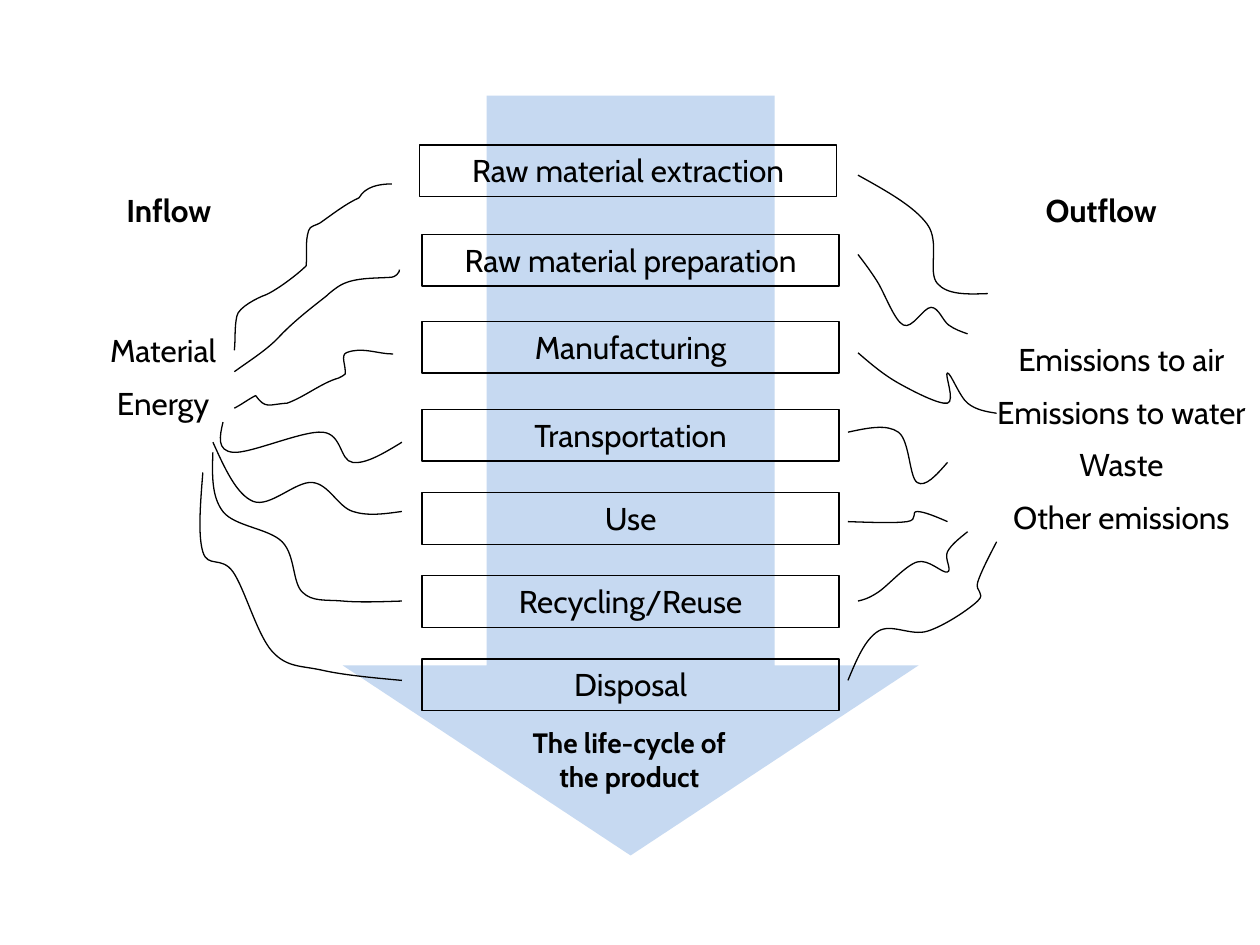
from lxml import etree
from pptx import Presentation
from pptx.dml.color import RGBColor
from pptx.enum.shapes import MSO_SHAPE
from pptx.enum.text import MSO_ANCHOR, PP_ALIGN
from pptx.oxml.ns import qn
from pptx.util import Cm, Pt

RECT, ARROW = MSO_SHAPE.RECTANGLE, MSO_SHAPE.DOWN_ARROW
CENTER, TOP = PP_ALIGN.CENTER, MSO_ANCHOR.TOP
FONT, BLACK, BLUE = "Cabin", "000000", "C6D9F1"

# Content: all places in inches, turned into Cm by size()
STAGES = [
    ("Raw material extraction", 3.33, 1.15),
    ("Raw material preparation", 3.35, 1.86),
    ("Manufacturing", 3.35, 2.55),
    ("Transportation", 3.35, 3.25),
    ("Use", 3.35, 3.91),
    ("Recycling/Reuse", 3.35, 4.57),
    ("Disposal", 3.35, 5.23),
]
# lines, place, point size, bold
LABELS = [
    (["Material", "Energy"], (0.43, 2.58, 1.73, 0.85), 18, False),
    (["The life-cycle of the product"], (4.05, 5.71, 1.89, 0.64), 16, True),
    (["Outflow"], (8.07, 1.47, 1.34, 0.4), 18, True),
    (["Inflow"], (0.67, 1.47, 1.34, 0.4), 18, True),
    (["Emissions to air", "Emissions to water", "Waste", "Other emissions"],
     (7.76, 2.65, 2.28, 1.76), 18, False),
]
# Curves with cornered bends: start, then two handles and a knot per piece
BENT = [
    [(1.86, 2.78), (1.87, 2.69), (1.86, 2.6), (1.88, 2.51),
     (1.89, 2.44), (2.05, 2.36), (2.11, 2.34),
     (2.2, 2.3), (2.36, 2.18), (2.43, 2.11),
     (2.44, 2.01), (2.42, 1.92), (2.45, 1.83),
     (2.46, 1.79), (2.51, 1.79), (2.54, 1.77),
     (2.64, 1.7), (2.74, 1.62), (2.85, 1.57),
     (2.9, 1.48), (3.01, 1.46), (3.11, 1.46)],
    [(1.86, 2.95), (1.97, 2.87), (2.1, 2.79), (2.2, 2.69),
     (2.32, 2.56), (2.45, 2.46), (2.59, 2.35),
     (2.61, 2.33), (2.67, 2.28), (2.71, 2.26),
     (2.82, 2.2), (2.99, 2.21), (3.11, 2.2),
     (3.12, 2.19), (3.14, 2.2), (3.15, 2.18),
     (3.17, 2.17), (3.17, 2.14), (3.17, 2.14)],
    [(1.86, 3.24), (1.92, 3.21), (1.97, 3.17), (2.03, 3.14),
     (2.11, 3.25), (2.13, 3.21), (2.28, 3.2),
     (2.42, 3.15), (2.55, 3.04), (2.69, 3),
     (2.71, 2.99), (2.73, 2.98), (2.74, 2.97),
     (2.75, 2.91), (2.7, 2.82), (2.75, 2.8),
     (2.87, 2.75), (3, 2.81), (3.12, 2.81)],
]
# Smooth curves: knots only
INFLOW = [
    [(1.77, 3.35), (1.85, 3.59), (2.56, 3.43), (2.8, 3.67), (3.19, 3.51)],
    [(1.69, 3.51), (2.01, 3.98), (2.48, 3.83), (2.8, 4.06), (3.19, 4.06)],
    [(1.69, 3.59), (1.77, 4.06), (2.24, 4.3), (2.4, 4.7), (2.72, 4.77),
     (3.19, 4.77)],
    [(1.61, 3.75), (1.61, 4.38), (1.85, 4.54), (2.16, 5.17), (2.56, 5.32),
     (3.19, 5.4)],
]
OUTFLOW = [
    [(6.81, 1.39), (7.36, 1.78), (7.44, 2.25), (7.84, 2.33)],
    [(6.81, 2.02), (6.96, 2.23), (7.17, 2.58), (7.39, 2.44), (7.53, 2.58),
     (7.68, 2.65)],
    [(6.81, 2.8), (7.13, 3.04), (7.52, 3.2), (7.52, 2.96), (7.68, 3.2),
     (7.91, 3.28)],
    [(6.73, 3.43), (7.13, 3.43), (7.28, 3.83), (7.52, 3.67)],
    [(6.73, 4.14), (7.2, 4.14), (7.28, 4.06), (7.52, 4.14)],
    [(6.81, 4.77), (6.97, 4.7), (7.28, 4.46), (7.52, 4.54), (7.52, 4.38),
     (7.68, 4.22)],
    [(6.73, 5.4), (6.97, 5.01), (7.36, 5.01), (7.76, 4.77), (7.76, 4.62),
     (7.91, 4.3)],
]


def size(*inches):
    return [Cm(2.54 * v) for v in inches]


def color(code):
    return RGBColor.from_string(code)


def outline(shape):
    shape.shadow.inherit = False
    shape.fill.background()
    shape.line.color.rgb = color(BLACK)
    shape.line.width = Pt(0.75)


def write(shape, lines, points=18, bold=False):
    frame = shape.text_frame
    frame.word_wrap = True
    frame.vertical_anchor = TOP
    frame.text = "\n".join(lines)
    for i, para in enumerate(frame.paragraphs):
        para.alignment = CENTER
        para.space_before = Pt(8.5 if i else 0)
        font = para.runs[0].font
        font.name, font.size, font.bold = FONT, Pt(points), bold
        font.color.rgb = color(BLACK)


def smooth(knots):
    """Add handles: a sixth of the span between a knot's neighbours."""
    def shift(a, b, part):
        return tuple(p + (q - p) * part for p, q in zip(a, b))

    out = [knots[0]]
    last = len(knots) - 1
    for i in range(last):
        a, b = knots[i], knots[i + 1]
        first = second = None
        if i > 0:
            first = tuple(p + (n - m) / 6
                          for p, m, n in zip(a, knots[i - 1], b))
        if i + 1 < last:
            second = tuple(p - (n - m) / 6
                           for p, m, n in zip(b, a, knots[i + 2]))
        out += [first or shift(a, second, 0.5),
                second or shift(b, first, 0.5), b]
    return out


def draw(shapes, points):
    start, *rest = [size(*p) for p in points]
    pen = shapes.build_freeform(*start)
    pen.add_line_segments(rest, close=False)
    shape = pen.convert_to_shape()
    outline(shape)
    # Turn every three straight pieces into one Bezier piece
    route = shape._element.find(".//" + qn("a:path"))
    parts = route.findall(qn("a:lnTo"))
    for i in range(0, len(parts), 3):
        curve = etree.SubElement(route, qn("a:cubicBezTo"))
        for part in parts[i:i + 3]:
            curve.append(part[0])
            route.remove(part)


def main():
    deck = Presentation()
    deck.slide_width, deck.slide_height = size(10, 7.5)
    shapes = deck.slides.add_slide(deck.slide_layouts[6]).shapes

    # Life-cycle arrow
    arrow = shapes.add_shape(ARROW, *size(2.72, 0.76, 4.57, 6.03))
    arrow.adjustments[0], arrow.adjustments[1] = 0.5, 0.33
    arrow.shadow.inherit = False
    arrow.fill.solid()
    arrow.fill.fore_color.rgb = color(BLUE)
    arrow.line.fill.background()

    # Stages
    for name, left, top in STAGES:
        box = shapes.add_shape(RECT, *size(left, top, 3.31, 0.41))
        outline(box)
        write(box, [name])

    # Labels
    for lines, place, points, bold in LABELS:
        write(shapes.add_textbox(*size(*place)), lines, points, bold)

    # Flow curves
    for points in BENT + [smooth(k) for k in INFLOW + OUTFLOW]:
        draw(shapes, points)

    deck.save("out.pptx")


if __name__ == "__main__":
    main()
